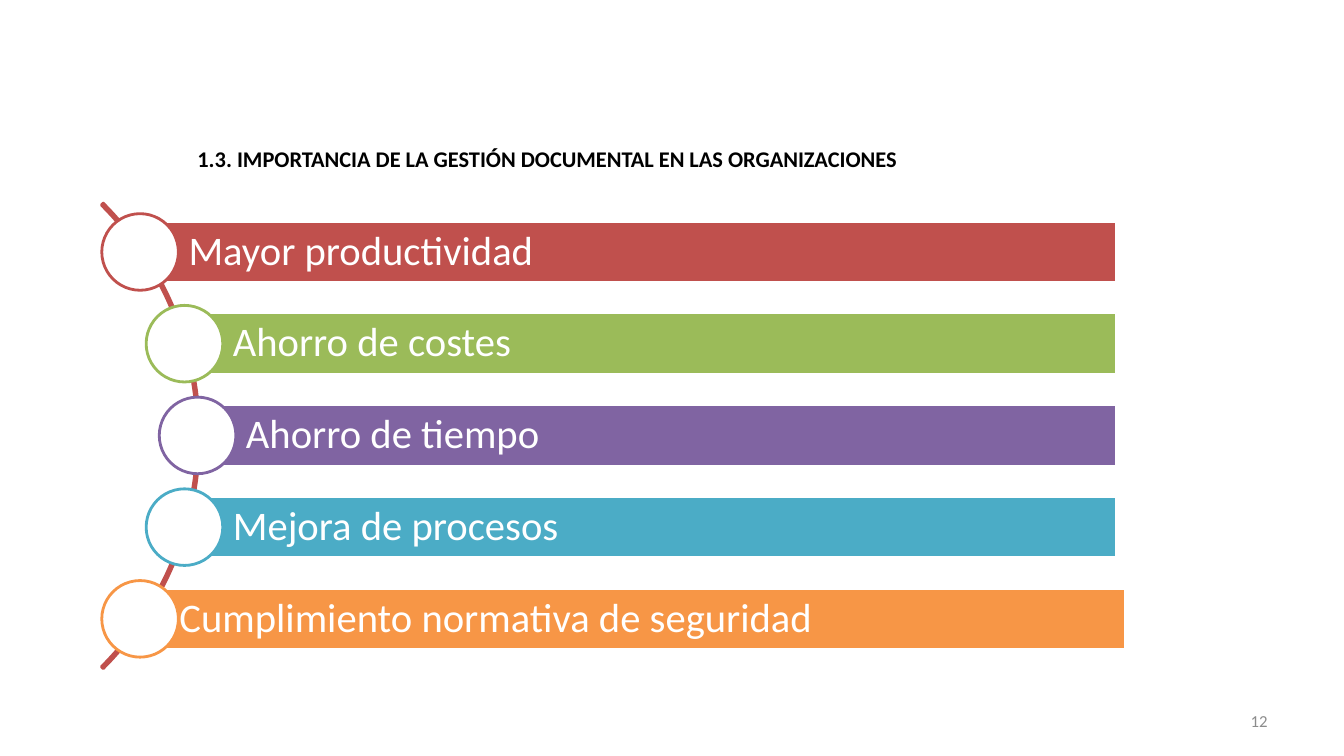
from pptx import Presentation
from pptx.dml.color import RGBColor
from pptx.enum.shapes import MSO_SHAPE
from pptx.enum.text import MSO_ANCHOR, PP_ALIGN
from pptx.util import Inches, Pt

RECTANGLE = MSO_SHAPE.RECTANGLE
OVAL = MSO_SHAPE.OVAL
BLOCK_ARC = MSO_SHAPE.BLOCK_ARC
TOP, MIDDLE = MSO_ANCHOR.TOP, MSO_ANCHOR.MIDDLE
LEFT, RIGHT = PP_ALIGN.LEFT, PP_ALIGN.RIGHT

WHITE = "FFFFFF"
ARC_COLOR = "C0504D"
CIRCLE_SIZE = 0.76
BAR_HEIGHT = 0.61
ROW_PITCH = 0.91

BENEFITS = [
    ("Mayor productividad", "C0504D", 0, 0),
    ("Ahorro de costes", "9BBB59", 0.44, 0),
    ("Ahorro de tiempo", "8064A2", 0.57, 0),
    ("Mejora de procesos", "4BACC6", 0.44, 0),
    ("Cumplimiento normativa de seguridad", "F79646", 0, 0.09),
]


def color(value):
    return RGBColor.from_string(value)


def write_text(shape, text, size, font_color, bold=False, align=LEFT, anchor=TOP,
               insets=(0.1, 0.05, 0.1, 0.05), line_spacing=None):
    frame = shape.text_frame
    frame.word_wrap = True
    frame.vertical_anchor = anchor
    frame.margin_left, frame.margin_top, frame.margin_right, frame.margin_bottom = map(Inches, insets)
    paragraph = frame.paragraphs[0]
    paragraph.alignment = align
    if line_spacing:
        paragraph.line_spacing = line_spacing
    run = paragraph.add_run()
    run.text = text
    run.font.name = "Calibri"
    run.font.size = Pt(size)
    run.font.bold = bold
    run.font.color.rgb = color(font_color)


def add_text(slide, box, text, **text_format):
    write_text(slide.shapes.add_textbox(*map(Inches, box)), text, **text_format)


def add_figure(slide, kind, box, line, fill=None):
    shape = slide.shapes.add_shape(kind, *map(Inches, box))
    shape.shadow.inherit = False
    if fill:
        shape.fill.solid()
        shape.fill.fore_color.rgb = color(fill)
    else:
        shape.fill.background()
    shape.line.color.rgb = color(line)
    shape.line.width = Pt(2)
    return shape


def add_arc(slide, box):
    arc = add_figure(slide, BLOCK_ARC, box, ARC_COLOR)
    for index, value in enumerate((189, 27, 0.004)):
        arc.adjustments[index] = value


def add_benefit(slide, left, top, right, text, fill, overhang):
    bar_left = left + CIRCLE_SIZE / 2 - overhang
    bar_top = top + (CIRCLE_SIZE - BAR_HEIGHT) / 2
    bar_box = (bar_left, bar_top, right + overhang - bar_left, BAR_HEIGHT)
    bar = add_figure(slide, RECTANGLE, bar_box, WHITE, fill)
    write_text(bar, text, size=29, font_color=WHITE, anchor=MIDDLE,
               insets=(0.48, 0.08, 0.08, 0.08), line_spacing=0.9)
    add_figure(slide, OVAL, (left, top, CIRCLE_SIZE, CIRCLE_SIZE), fill, WHITE)


def add_benefit_list(slide, left, top, width):
    add_arc(slide, (left - 5.56, top - 1.06, 6.53, 6.53))
    for row, (text, fill, indent, overhang) in enumerate(BENEFITS):
        add_benefit(slide, left + indent, top + row * ROW_PITCH, left + width,
                    text, fill, overhang)


def main():
    presentation = Presentation()
    presentation.slide_width = Inches(13.33)
    presentation.slide_height = Inches(7.5)
    slide = presentation.slides.add_slide(presentation.slide_layouts[6])
    add_text(slide, (9.56, 6.95, 3.11, 0.4), "12", size=12, font_color="8C8C8C",
             align=RIGHT, anchor=MIDDLE)
    add_text(slide, (1.86, 1.39, 7.28, 0.37),
             "1.3. IMPORTANCIA DE LA GESTIÓN DOCUMENTAL EN LAS ORGANIZACIONES",
             size=16, font_color="000000", bold=True)
    add_benefit_list(slide, 1.01, 2.12, 10.06)
    presentation.save("out.pptx")


if __name__ == "__main__":
    main()
